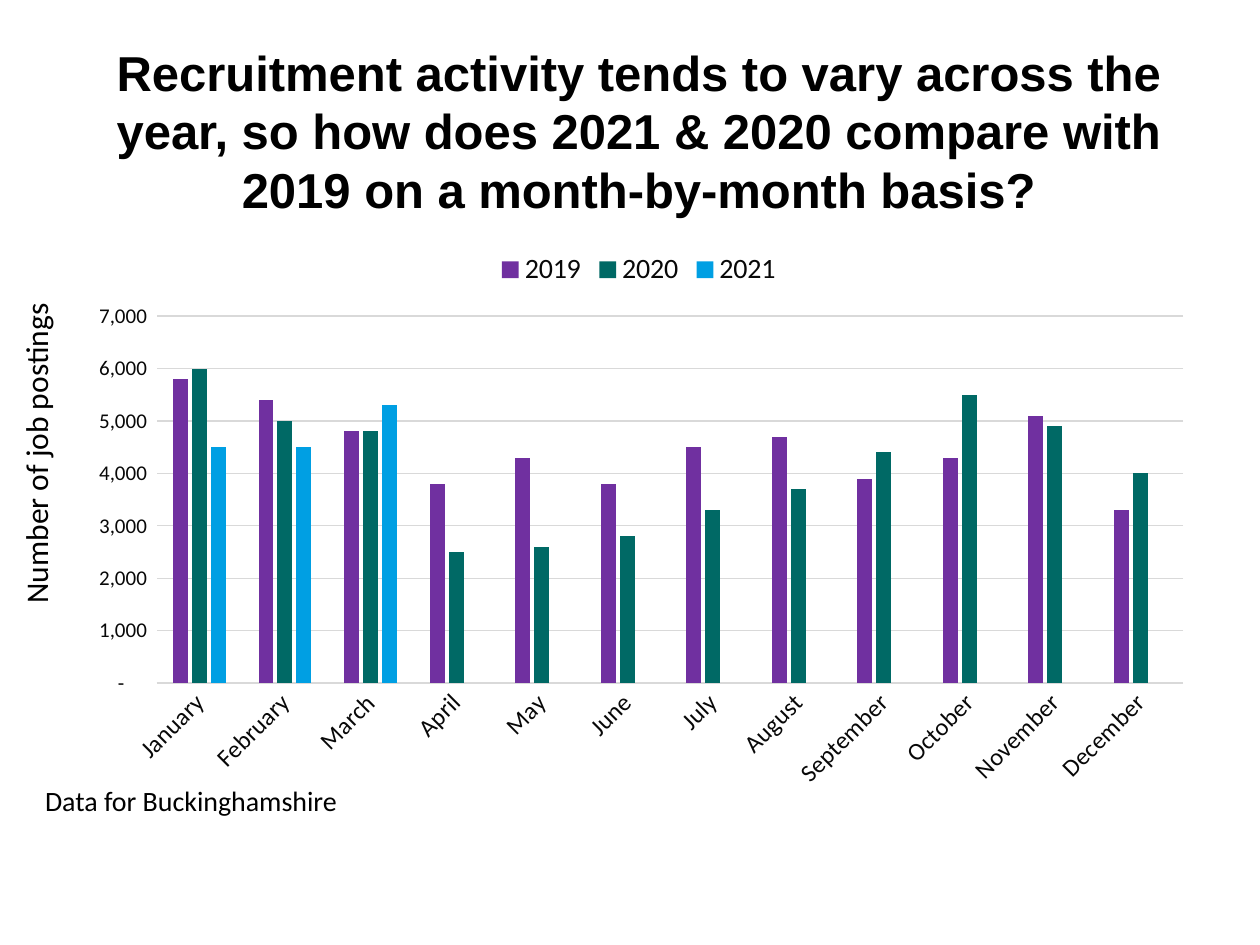
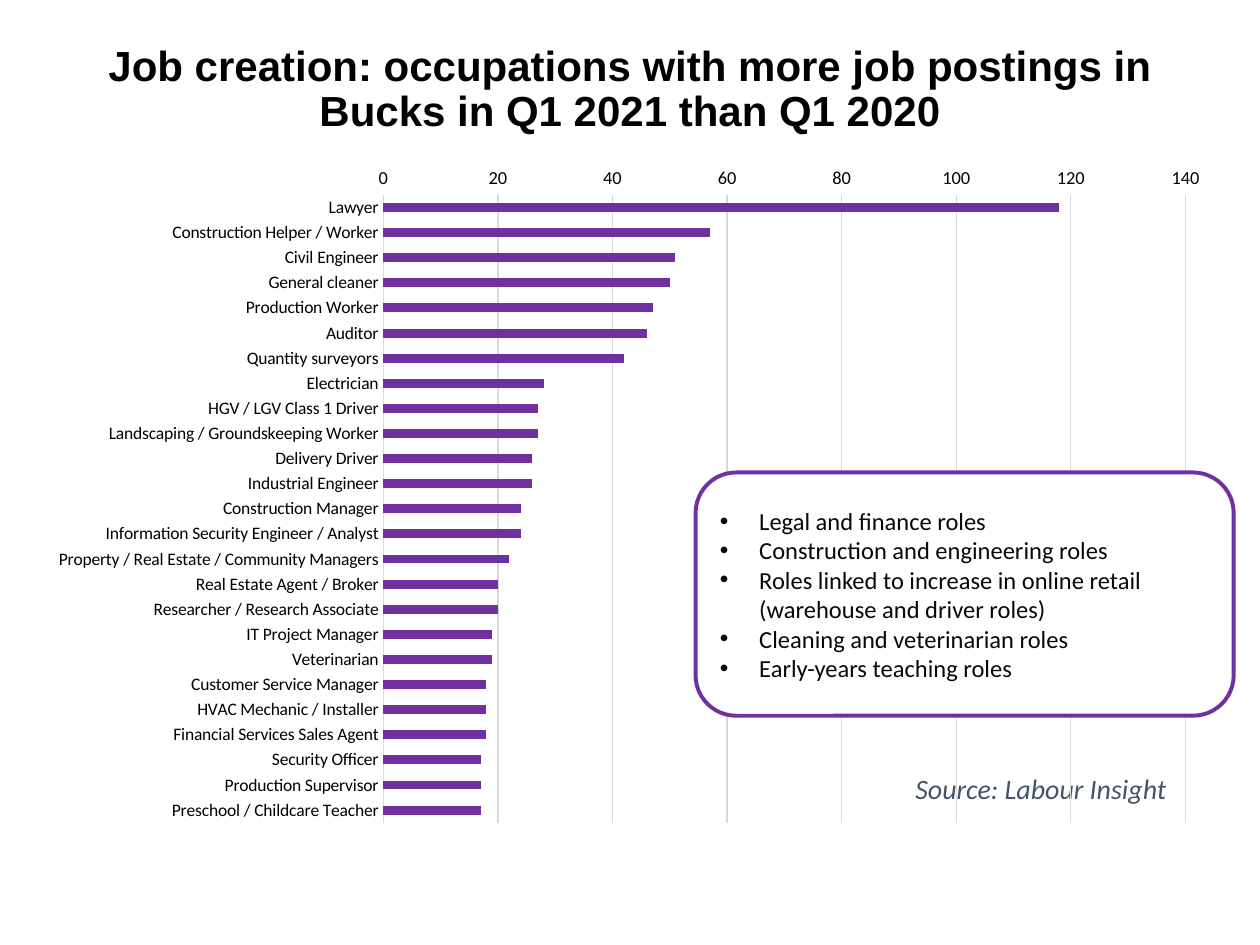
from lxml.etree import SubElement
from pptx import Presentation
from pptx.chart.data import CategoryChartData
from pptx.dml.color import RGBColor
from pptx.enum.chart import XL_CHART_TYPE, XL_LEGEND_POSITION, XL_TICK_MARK
from pptx.enum.shapes import MSO_SHAPE
from pptx.enum.text import MSO_ANCHOR, MSO_AUTO_SIZE, PP_ALIGN
from pptx.oxml.ns import qn
from pptx.util import Pt

BLACK = RGBColor(0, 0, 0)
INK = RGBColor(0x08, 0x08, 0x08)
WHITE = RGBColor(0xFF, 0xFF, 0xFF)
GREY = RGBColor(0xD9, 0xD9, 0xD9)
SLATE = RGBColor(0x44, 0x54, 0x6A)
PURPLE = RGBColor(0x70, 0x30, 0xA0)
GREEN = RGBColor(0x00, 0x69, 0x65)
BLUE = RGBColor(0x00, 0x9F, 0xE3)

MONTHS = ["January", "February", "March", "April", "May", "June", "July",
          "August", "September", "October", "November", "December"]
YEARS = [
    ("2019", PURPLE, [5800, 5400, 4800, 3800, 4300, 3800,
                      4500, 4700, 3900, 4300, 5100, 3300]),
    ("2020", GREEN, [6000, 5000, 4800, 2500, 2600, 2800,
                     3300, 3700, 4400, 5500, 4900, 4000]),
    ("2021", BLUE, [4500, 4500, 5300] + [None] * 9),
]
COUNT = r'_-* #,##0_-;\-* #,##0_-;_-* "-"??_-;_-@_'

JOBS = [
    ("Lawyer", 118),
    ("Construction Helper / Worker", 57),
    ("Civil Engineer", 51),
    ("General cleaner", 50),
    ("Production Worker", 47),
    ("Auditor", 46),
    ("Quantity surveyors", 42),
    ("Electrician", 28),
    ("HGV / LGV Class 1 Driver", 27),
    ("Landscaping / Groundskeeping Worker", 27),
    ("Delivery Driver", 26),
    ("Industrial Engineer", 26),
    ("Construction Manager", 24),
    ("Information Security Engineer / Analyst", 24),
    ("Property / Real Estate / Community Managers", 22),
    ("Real Estate Agent / Broker", 20),
    ("Researcher / Research Associate", 20),
    ("IT Project Manager", 19),
    ("Veterinarian", 19),
    ("Customer Service Manager", 18),
    ("HVAC Mechanic / Installer", 18),
    ("Financial Services Sales Agent", 18),
    ("Security Officer", 17),
    ("Production Supervisor", 17),
    ("Preschool / Childcare Teacher", 17),
]
ROLES = [
    "Legal and finance roles",
    "Construction and engineering roles",
    "Roles linked to increase in online retail (warehouse and driver roles)",
    "Cleaning and veterinarian roles",
    "Early-years teaching roles",
]


def style(font, size, color, name="Calibri"):
    font.name = name
    font.size = Pt(size)
    font.color.rgb = color


def add_slide(deck, title, box, size, lead):
    slide = deck.slides.add_slide(deck.slide_layouts[5])
    head = slide.shapes.title
    head.left, head.top, head.width, head.height = map(Pt, box)
    frame = head.text_frame
    frame.text = title
    frame.auto_size = MSO_AUTO_SIZE.NONE
    frame.vertical_anchor = MSO_ANCHOR.MIDDLE
    para = frame.paragraphs[0]
    para.alignment = PP_ALIGN.CENTER
    para.line_spacing = lead
    style(para.font, size, BLACK, "Arial")
    para.font.bold = True
    return slide


def add_label(slide, text, box, size, color=BLACK):
    frame = slide.shapes.add_textbox(*map(Pt, box)).text_frame
    frame.word_wrap = True
    frame.text = text
    style(frame.paragraphs[0].font, size, color)
    return frame


def add_bars(slide, kind, box, cats, series, gap, top, step):
    """Add a bar chart; series holds (name, colour, values) rows."""
    data = CategoryChartData()
    data.categories = cats
    for name, _, vals in series:
        data.add_series(name, vals)
    chart = slide.shapes.add_chart(kind, *map(Pt, box), data).chart
    style(chart.font, 10, BLACK)
    chart.has_title = False
    chart.has_legend = False
    plot = chart.plots[0]
    plot.gap_width = gap
    plot.vary_by_categories = False
    for bars, (_, color, _) in zip(plot.series, series):
        bars.format.fill.solid()
        bars.format.fill.fore_color.rgb = color
        bars.invert_if_negative = False
    cat, val = chart.category_axis, chart.value_axis
    for axis in (cat, val):
        axis.major_tick_mark = axis.minor_tick_mark = XL_TICK_MARK.NONE
    val.minimum_scale, val.maximum_scale, val.major_unit = 0, top, step
    val.format.line.fill.background()
    val.has_major_gridlines = True
    for line in (cat.format.line, val.major_gridlines.format.line):
        line.color.rgb = GREY
        line.width = Pt(0.75)
    return chart


def add_bullet(para, indent):
    props = para._p.get_or_add_pPr()
    props.set("marL", str(Pt(indent)))
    props.set("indent", str(-Pt(indent)))
    SubElement(props, qn("a:buFont"), typeface="Arial")
    SubElement(props, qn("a:buChar"), char="•")


def show_months(deck):
    slide = add_slide(
        deck, "Recruitment activity tends to vary across the year, so how does "
        "2021 & 2020 compare with 2019 on a month-by-month basis?",
        (41, 29.5, 648, 90), 28, 1)
    chart = add_bars(slide, XL_CHART_TYPE.COLUMN_CLUSTERED,
                     (41, 136, 648, 321), MONTHS, YEARS, 219, 7000, 1000)
    chart.plots[0].overlap = -27
    chart.has_legend = True
    chart.legend.position = XL_LEGEND_POSITION.TOP
    chart.legend.include_in_layout = False
    style(chart.legend.font, 16, INK)
    cat, val = chart.category_axis, chart.value_axis
    style(cat.tick_labels.font, 14, INK)
    cat._element.txPr.bodyPr.set("rot", str(-45 * 60000))
    style(val.tick_labels.font, 12, INK)
    val.tick_labels.number_format = COUNT
    val.tick_labels.number_format_is_linked = False
    add_label(slide, "Data for Buckinghamshire", (18.7, 444, 272, 27), 16)
    side = add_label(slide, "Number of job postings", (6, 150, 36, 202), 18)
    side._txBody.bodyPr.set("vert", "vert270")


def show_jobs(deck):
    slide = add_slide(
        deck, "Job creation: occupations with more job postings in Bucks "
        "in Q1 2021 than Q1 2020", (49.7, 15, 620.6, 73.5), 24, 0.9)
    source = add_label(slide, "Source: Labour Insight",
                       (516, 436, 190, 27), 16, SLATE).paragraphs[0]
    source.font.italic = True
    source.line_spacing = 1.07
    names, counts = zip(*JOBS)
    chart = add_bars(slide, XL_CHART_TYPE.BAR_CLUSTERED, (20, 88, 679, 390),
                     names, [("Series 1", PURPLE, counts)], 182, 140, 20)
    chart.category_axis.reverse_order = True
    style(chart.category_axis.tick_labels.font, 10, BLACK)
    style(chart.value_axis.tick_labels.font, 10.5, BLACK)

    card = slide.shapes.add_shape(MSO_SHAPE.ROUNDED_RECTANGLE,
                                  *map(Pt, (397.5, 270, 307.5, 139)))
    card.shadow.inherit = False
    card.fill.solid()
    card.fill.fore_color.rgb = WHITE
    card.line.color.rgb = PURPLE
    card.line.width = Pt(2.25)
    frame = card.text_frame
    frame.word_wrap = True
    frame.vertical_anchor = MSO_ANCHOR.MIDDLE
    frame.text = "\n".join(ROLES)
    for para in frame.paragraphs:
        para.alignment = PP_ALIGN.LEFT
        add_bullet(para, 22.5)
        style(para.font, 14, INK)


def main():
    deck = Presentation()
    deck.slide_width, deck.slide_height = Pt(720), Pt(540)
    show_months(deck)
    show_jobs(deck)
    deck.save("out.pptx")


if __name__ == "__main__":
    main()
